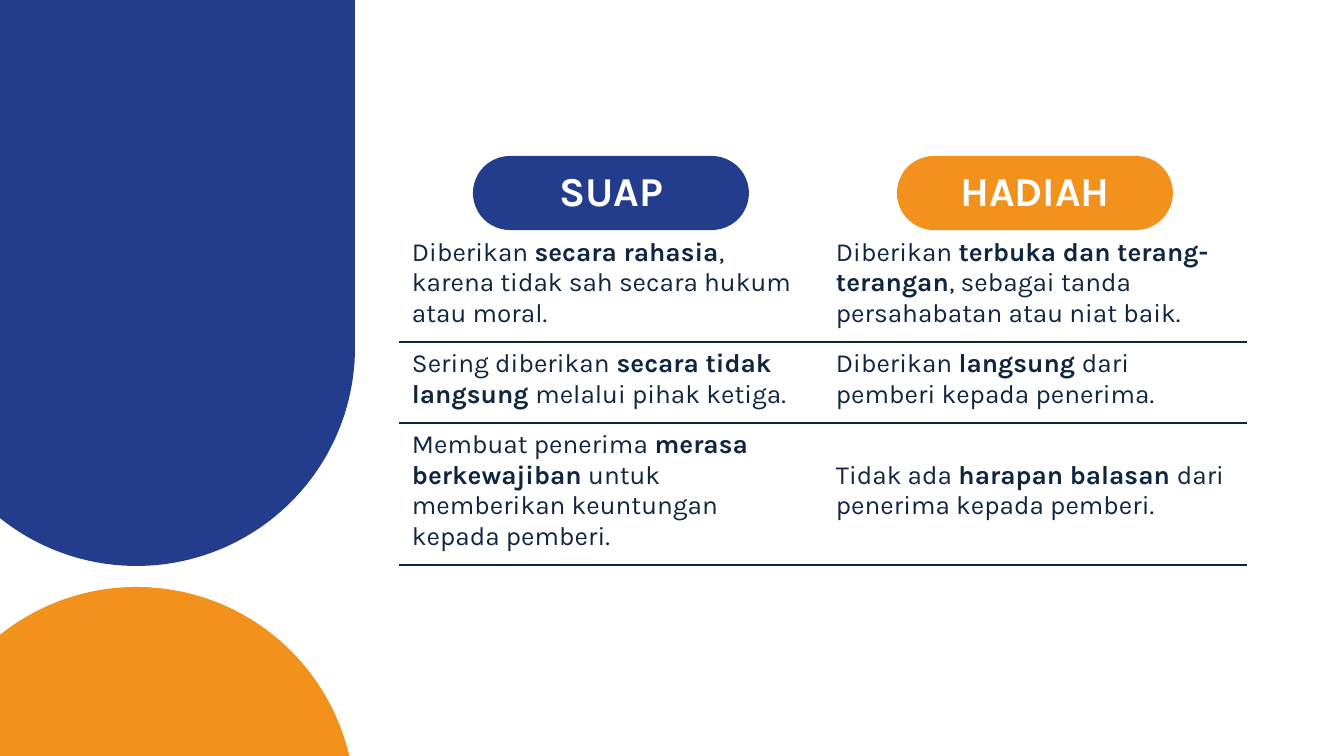
from lxml import etree
from pptx import Presentation
from pptx import util as u
from pptx.dml.color import RGBColor
from pptx.enum import shapes, text
from pptx.oxml.ns import qn

PX = 914400 / 134.4
BLUE, ORANGE, NAVY, WHITE = "233D8C", "F2911B", "102540", "FFFFFF"
HEADER = {"name": "Karla", "size": u.Pt(22), "bold": True}
BODY = {"name": "Karla", "size": u.Pt(14), "bold": False}

TABLE_LEFT, TABLE_TOP, COLUMN_WIDTH = 399, 160, 424
ROW_HEIGHTS = [70, 112, 81, 142]
PILL_TOP, PILL_WIDTH, PILL_HEIGHT = 156, 276, 74

HEADINGS = ["SUAP", "HADIAH"]
# Asterisks enclose bold words.
COMPARISONS = [
    ["Diberikan *secara rahasia*, karena tidak sah secara hukum atau moral.",
     "Diberikan *terbuka dan terang-terangan*, sebagai tanda persahabatan atau niat baik."],
    ["Sering diberikan* secara tidak langsung *melalui pihak ketiga.",
     "Diberikan *langsung *dari pemberi kepada penerima."],
    ["Membuat penerima *merasa berkewajiban* untuk memberikan keuntungan kepada pemberi.",
     "Tidak ada *harapan balasan *dari penerima kepada pemberi."],
]


def px(length):
    return u.Emu(round(length * PX))


def color(value):
    return RGBColor.from_string(value)


def set_attributes(target, values):
    for name, value in values.items():
        setattr(target, name, value)


class SlideBuilder:
    def __init__(self, slide):
        self.slide = slide

    def rounded(self, left, top, width, height, fill):
        shape = self.slide.shapes.add_shape(
            shapes.MSO_SHAPE.ROUNDED_RECTANGLE, *map(px, (left, top, width, height)))
        shape.adjustments[0] = 0.5
        shape.shadow.inherit = False
        shape.fill.solid()
        shape.fill.fore_color.rgb = color(fill)
        shape.line.fill.background()

    def table(self, left, top, column_width, row_heights, rows):
        columns = len(rows[0])
        table = self.slide.shapes.add_table(
            len(rows), columns, px(left), px(top),
            px(column_width * columns), px(sum(row_heights))).table
        set_attributes(table, {"first_row": False, "horz_banding": False})
        for column in table.columns:
            column.width = px(column_width)
        for index, (height, row) in enumerate(zip(row_heights, rows)):
            table.rows[index].height = px(height)
            for cell, content in zip(table.rows[index].cells, row):
                self.cell(cell, content, is_header=index == 0)
                self.borders(cell, {"T": index > 1, "B": index > 0})

    def cell(self, cell, content, is_header):
        set_attributes(cell, {
            "margin_left": px(13), "margin_right": px(13),
            "margin_top": px(9 if is_header else 7), "margin_bottom": px(13),
            "vertical_anchor": text.MSO_ANCHOR.MIDDLE})
        cell.fill.background()
        paragraph = cell.text_frame.paragraphs[0]
        paragraph.alignment = text.PP_ALIGN.CENTER if is_header else text.PP_ALIGN.LEFT
        for index, words in enumerate(content.split("*")):
            run = paragraph.add_run()
            run.text = words
            set_attributes(run.font, HEADER if is_header else BODY)
            if index % 2:
                run.font.bold = True
            run.font.color.rgb = color(WHITE if is_header else NAVY)

    def borders(self, cell, visible):
        """Rule the sides marked visible and clear the others."""
        properties = cell._tc.get_or_add_tcPr()
        for index, side in enumerate("LRTB"):
            line = etree.Element(qn(f"a:ln{side}"), w=str(u.Pt(1.5)))
            if visible.get(side):
                fill = etree.SubElement(line, qn("a:solidFill"))
                etree.SubElement(fill, qn("a:srgbClr"), val=NAVY)
            else:
                etree.SubElement(line, qn("a:noFill"))
            properties.insert(index, line)


def main():
    presentation = Presentation()
    presentation.slide_width, presentation.slide_height = px(1344), px(756)
    builder = SlideBuilder(presentation.slides.add_slide(presentation.slide_layouts[6]))

    builder.rounded(-82, -239, 437, 805, BLUE)
    builder.rounded(-82, 587, 437, 554, ORANGE)
    pill_inset = (COLUMN_WIDTH - PILL_WIDTH) // 2
    for index, fill in enumerate([BLUE, ORANGE]):
        builder.rounded(TABLE_LEFT + index * COLUMN_WIDTH + pill_inset,
                        PILL_TOP, PILL_WIDTH, PILL_HEIGHT, fill)
    builder.table(TABLE_LEFT, TABLE_TOP, COLUMN_WIDTH, ROW_HEIGHTS,
                  [HEADINGS, *COMPARISONS])

    presentation.save("out.pptx")


if __name__ == "__main__":
    main()
